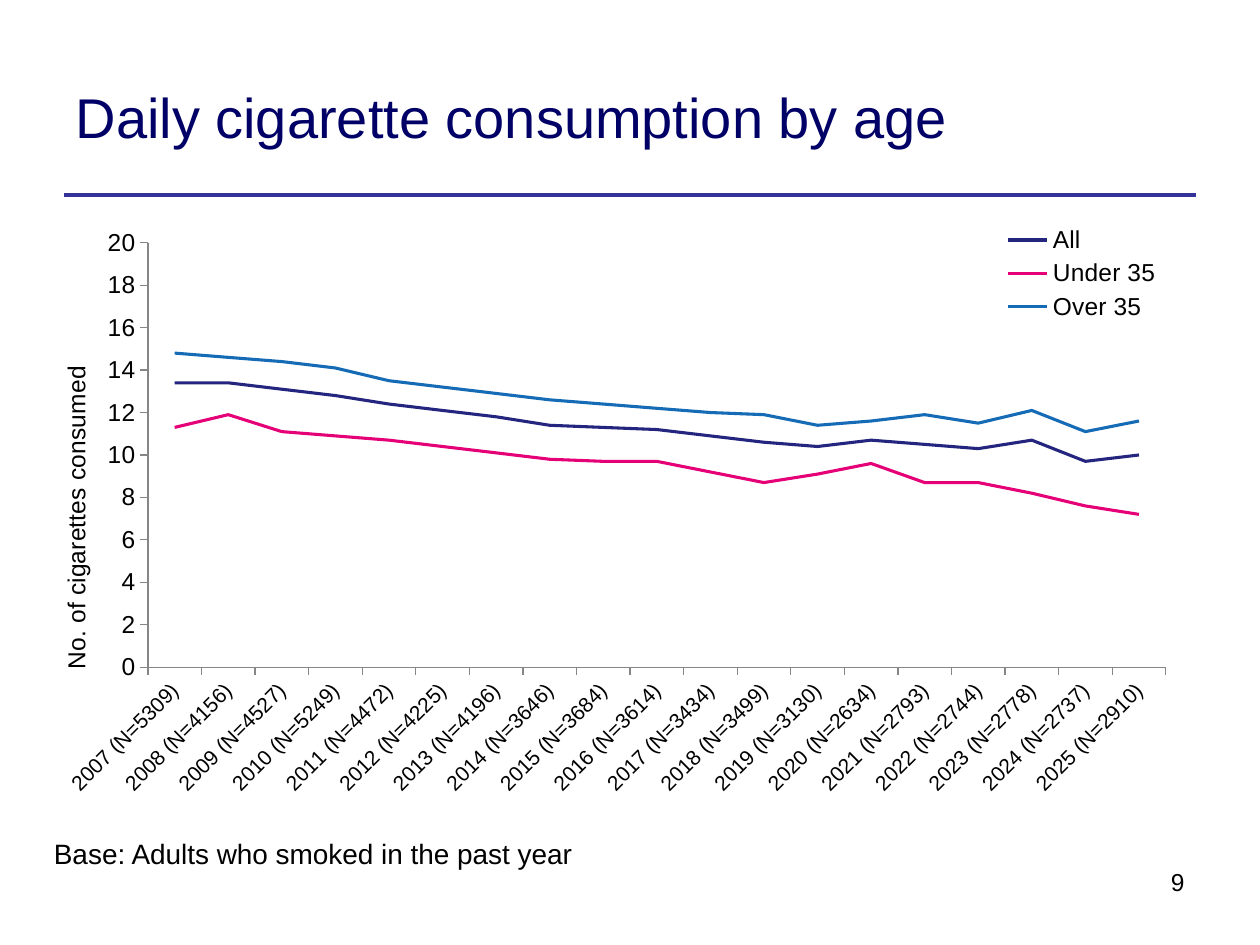
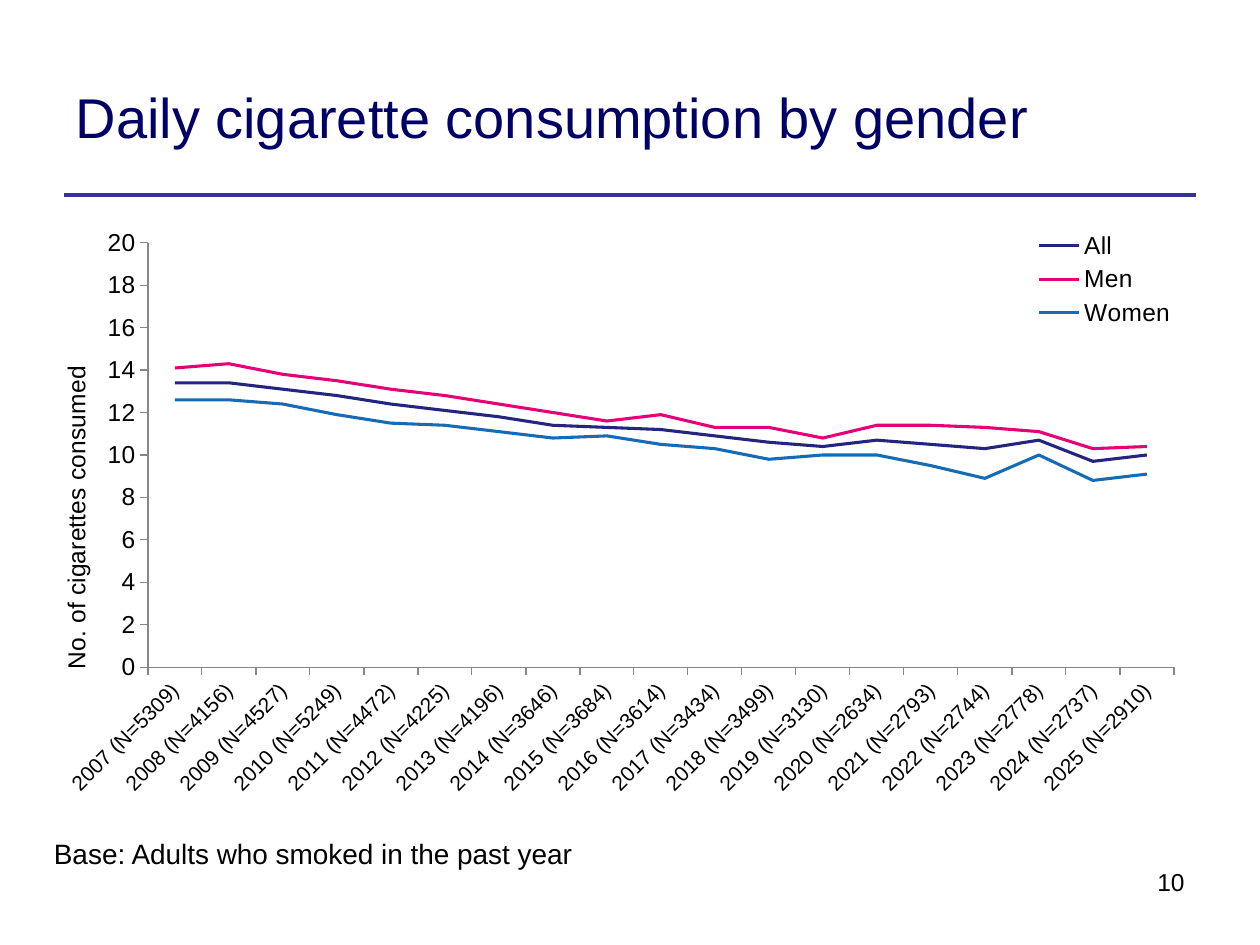
from pptx import Presentation
from pptx.chart.data import CategoryChartData
from pptx.dml.color import RGBColor
from pptx.enum import chart as charts, shapes, text
from pptx.oxml.ns import qn
from pptx.oxml.xmlchemy import OxmlElement
from pptx.util import Inches, Pt

FONT = "Arial"
BLACK = RGBColor(0x00, 0x00, 0x00)
TITLE_NAVY = RGBColor(0x00, 0x00, 0x66)
RULE_BLUE = RGBColor(0x33, 0x33, 0x99)
AXIS_GREY = RGBColor(0x86, 0x86, 0x86)
SERIES_COLOURS = (
    RGBColor(0x24, 0x25, 0x7E),
    RGBColor(0xE5, 0x00, 0x78),
    RGBColor(0x15, 0x6B, 0xB5),
)

FIRST_YEAR = 2007
SAMPLE_SIZES = (5309, 4156, 4527, 5249, 4472, 4225, 4196, 3646, 3684, 3614,
                3434, 3499, 3130, 2634, 2793, 2744, 2778, 2737, 2910)
ALL = (13.4, 13.4, 13.1, 12.8, 12.4, 12.1, 11.8, 11.4, 11.3, 11.2,
       10.9, 10.6, 10.4, 10.7, 10.5, 10.3, 10.7, 9.7, 10)
BY_AGE = {
    "All": ALL,
    "Under 35": (11.3, 11.9, 11.1, 10.9, 10.7, 10.4, 10.1, 9.8, 9.7, 9.7,
                 9.2, 8.7, 9.1, 9.6, 8.7, 8.7, 8.2, 7.6, 7.2),
    "Over 35": (14.8, 14.6, 14.4, 14.1, 13.5, 13.2, 12.9, 12.6, 12.4, 12.2,
                12, 11.9, 11.4, 11.6, 11.9, 11.5, 12.1, 11.1, 11.6),
}
BY_GENDER = {
    "All": ALL,
    "Men": (14.1, 14.3, 13.8, 13.5, 13.1, 12.8, 12.4, 12, 11.6, 11.9,
            11.3, 11.3, 10.8, 11.4, 11.4, 11.3, 11.1, 10.3, 10.4),
    "Women": (12.6, 12.6, 12.4, 11.9, 11.5, 11.4, 11.1, 10.8, 10.9, 10.5,
              10.3, 9.8, 10, 10, 9.5, 8.9, 10, 8.8, 9.1),
}


def style_font(font, size, colour=BLACK):
    font.name = FONT
    font.size = Pt(size)
    font.bold = False
    font.color.rgb = colour


def add_run(paragraph, words, size, colour=BLACK):
    run = paragraph.add_run()
    run.text = words
    style_font(run.font, size, colour)


def add_title(slide, words):
    title = slide.shapes.title
    title.left, title.top = Inches(0.5), Inches(0.3)
    title.width, title.height = Inches(7.89), Inches(1.25)
    frame = title.text_frame
    frame.vertical_anchor = text.MSO_ANCHOR.MIDDLE
    frame.paragraphs[0].alignment = text.PP_ALIGN.LEFT
    add_run(frame.paragraphs[0], words, 32, TITLE_NAVY)


def add_title_rule(slide):
    rule = slide.shapes.add_connector(
        shapes.MSO_CONNECTOR.STRAIGHT,
        Inches(0.51), Inches(1.55), Inches(9.49), Inches(1.55))
    rule.line.color.rgb = RULE_BLUE
    rule.line.width = Pt(2.25)
    rule._element.spPr.append(OxmlElement("a:effectLst"))


def add_note(slide, words, box, size, align=text.PP_ALIGN.LEFT, wrap=True):
    note = slide.shapes.add_textbox(*map(Inches, box))
    note.text_frame.word_wrap = wrap
    paragraph = note.text_frame.paragraphs[0]
    paragraph.alignment = align
    add_run(paragraph, words, size)


def set_layout(part, index, inner=False, **fractions):
    """Place a chart part by x, y, w, h as fractions of the chart."""
    layout = part.find(qn("c:layout"))
    if layout is None:
        layout = OxmlElement("c:layout")
        part.insert(index, layout)
    manual = OxmlElement("c:manualLayout")
    layout.append(manual)
    settings = [("layoutTarget", "inner")] if inner else []
    settings += [("xMode", "edge"), ("yMode", "edge"), *fractions.items()]
    for tag, value in settings:
        child = OxmlElement(f"c:{tag}")
        child.set("val", str(value))
        manual.append(child)


def rotate_text(part, degrees):
    part.xpath(".//a:bodyPr")[0].set("rot", str(degrees * 60000))


def style_axis(axis, label_size):
    axis.has_major_gridlines = False
    axis.major_tick_mark = charts.XL_TICK_MARK.OUTSIDE
    axis.minor_tick_mark = charts.XL_TICK_MARK.NONE
    axis.format.line.color.rgb = AXIS_GREY
    axis.format.line.width = Pt(0.75)
    style_font(axis.tick_labels.font, label_size)


def add_consumption_chart(slide, groups, plot_width, legend_x, legend_y):
    data = CategoryChartData()
    data.categories = [f"{year} (N={size})"
                       for year, size in enumerate(SAMPLE_SIZES, FIRST_YEAR)]
    for name, values in groups.items():
        data.add_series(name, values)
    chart = slide.shapes.add_chart(
        charts.XL_CHART_TYPE.LINE, Inches(0.35), Inches(1.75),
        Inches(9.15), Inches(4.66), data).chart
    style_font(chart.font, 18)
    chart.has_title = False
    chart.plots[0].vary_by_categories = False
    for series, colour in zip(chart.plots[0].series, SERIES_COLOURS):
        series.smooth = False
        series.marker.style = charts.XL_MARKER_STYLE.NONE
        series.format.line.color.rgb = colour
        series.format.line.width = Pt(1.75)

    years, cigarettes = chart.category_axis, chart.value_axis
    style_axis(years, 12)
    rotate_text(years._element, -45)
    style_axis(cigarettes, 14)
    cigarettes.minimum_scale, cigarettes.maximum_scale = 0, 20
    cigarettes.major_unit = 2
    axis_title = cigarettes.axis_title
    add_run(axis_title.text_frame.paragraphs[0],
            "No. of cigarettes consumed", 14)
    rotate_text(axis_title._element, -90)
    set_layout(axis_title._element, 1, x=0.01, y=0.24)

    chart.has_legend = True
    legend = chart.legend
    legend.position = charts.XL_LEGEND_POSITION.RIGHT
    legend.include_in_layout = False
    style_font(legend.font, 14)
    set_layout(legend._element, 1, x=legend_x, y=legend_y, w=0.16, h=0.18)
    plot_area = chart._chartSpace.chart.plotArea
    set_layout(plot_area, 0, inner=True, x=0.09, y=0.038, w=plot_width, h=0.723)


def add_consumption_slide(deck, page, title, groups, **chart_places):
    slide = deck.slides.add_slide(deck.slide_layouts.get_by_name("Title Only"))
    add_title_rule(slide)
    add_title(slide, title)
    add_consumption_chart(slide, groups, **chart_places)
    add_note(slide, str(page), (6.73, 6.83, 2.77, 0.52), 14,
             align=text.PP_ALIGN.RIGHT)
    add_note(slide, "Base: Adults who smoked in the past year",
             (0.33, 6.59, 4.37, 0.37), 16, wrap=False)


def main():
    deck = Presentation()
    deck.slide_width, deck.slide_height = Inches(10), Inches(7.5)
    add_consumption_slide(deck, 9, "Daily cigarette consumption by age", BY_AGE,
                          plot_width=0.883, legend_x=0.82, legend_y=0)
    add_consumption_slide(deck, 10, "Daily cigarette consumption by gender",
                          BY_GENDER, plot_width=0.89, legend_x=0.84,
                          legend_y=0.01)
    deck.save("out.pptx")


if __name__ == "__main__":
    main()
